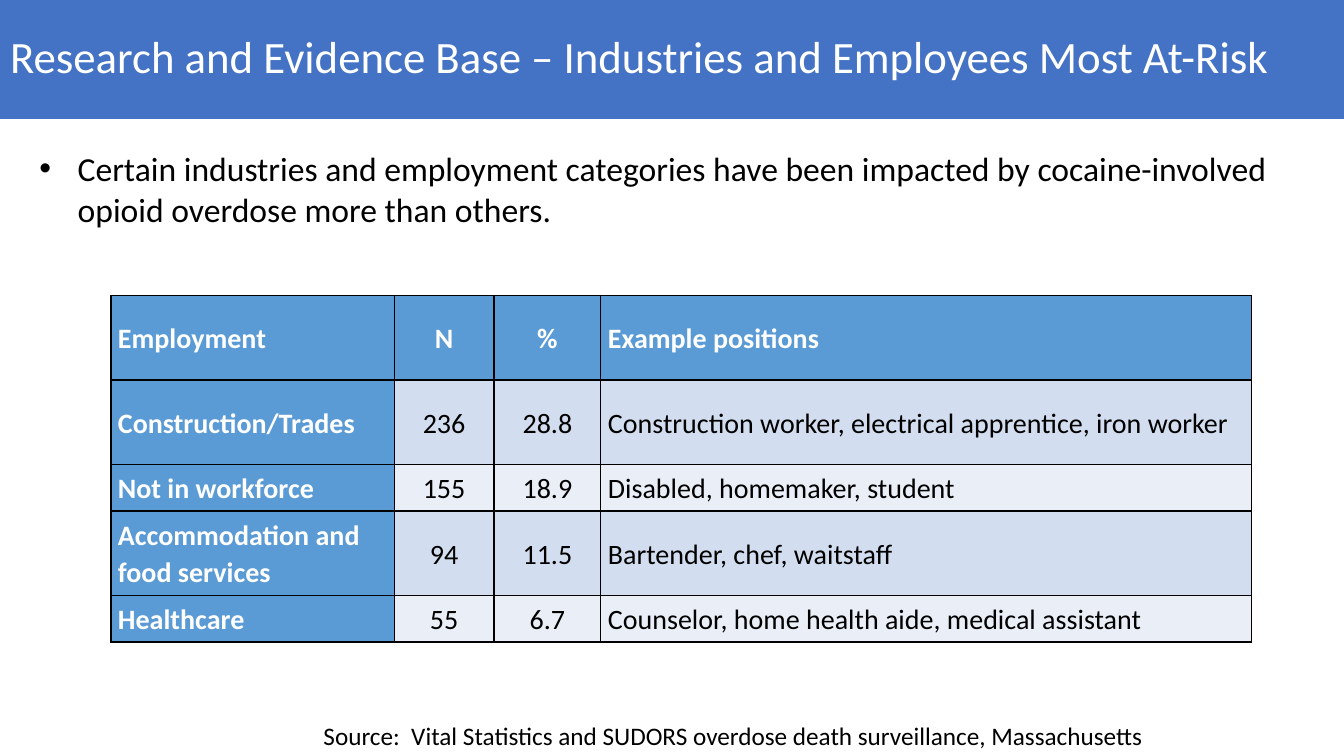
from lxml import etree
from pptx import Presentation
from pptx.dml.color import RGBColor
from pptx.enum.text import MSO_ANCHOR, MSO_AUTO_SIZE, PP_ALIGN
from pptx.oxml.ns import qn
from pptx.util import Inches, Pt

LEFT, CENTER = PP_ALIGN.LEFT, PP_ALIGN.CENTER
MIDDLE, TOP = MSO_ANCHOR.MIDDLE, MSO_ANCHOR.TOP
NO_AUTOFIT = MSO_AUTO_SIZE.NONE

WHITE = RGBColor(0xFF, 0xFF, 0xFF)
BLACK = RGBColor(0x00, 0x00, 0x00)
TITLE_BLUE = RGBColor(0x44, 0x72, 0xC4)
HEADER_BLUE = RGBColor(0x5B, 0x9B, 0xD5)
BAND_DARK = RGBColor(0xD2, 0xDE, 0xEF)
BAND_LIGHT = RGBColor(0xEA, 0xEF, 0xF7)

FONT = "Calibri"
COLUMN_WIDTHS = (2.81, 0.99, 1.06, 6.45)
ROW_HEIGHTS = (0.84, 0.84, 0.46, 0.84, 0.46)
ROWS = (
    ("Employment", "N", "%", "Example positions"),
    ("Construction/Trades", "236", "28.8",
     "Construction worker, electrical apprentice, iron worker"),
    ("Not in workforce", "155", "18.9", "Disabled, homemaker, student"),
    ("Accommodation and food services", "94", "11.5", "Bartender, chef, waitstaff"),
    ("Healthcare", "55", "6.7", "Counselor, home health aide, medical assistant"),
)


def write_text(tf, text, size=20, color=BLACK, bold=False, align=LEFT,
               spacing=1.0, anchor=TOP):
    tf.word_wrap = True
    tf.vertical_anchor = anchor
    p = tf.paragraphs[0]
    p.alignment = align
    p.line_spacing = spacing
    p.space_before = Pt(0)
    r = p.add_run()
    r.text = text
    r.font.name = FONT
    r.font.size = Pt(size)
    r.font.bold = bold
    r.font.color.rgb = color
    return p


def place(sp, left, top, width, height):
    sp.left, sp.top = Inches(left), Inches(top)
    sp.width, sp.height = Inches(width), Inches(height)
    sp.text_frame.auto_size = NO_AUTOFIT


def add_title(s, text):
    sp = s.shapes.title
    place(sp, 0, 0, 13.33, 1.18)
    sp.fill.solid()
    sp.fill.fore_color.rgb = TITLE_BLUE
    write_text(sp.text_frame, text, size=32, color=WHITE, spacing=0.9, anchor=MIDDLE)


def add_bullet(s, text):
    sp = s.placeholders[1]
    place(sp, 0.29, 1.42, 12.94, 0.91)
    p = write_text(sp.text_frame, text, size=24)
    pPr = p._p.get_or_add_pPr()
    pPr.set("marL", str(Inches(0.38)))
    pPr.set("indent", str(-Inches(0.38)))
    etree.SubElement(pPr, qn("a:buFont"), typeface="Arial")
    etree.SubElement(pPr, qn("a:buChar"), char="•")


def set_borders(cell, color, width):
    tcPr = cell._tc.get_or_add_tcPr()
    for i, side in enumerate(("lnL", "lnR", "lnT", "lnB")):
        ln = etree.Element(qn(f"a:{side}"), w=str(Pt(width)))
        fill = etree.SubElement(ln, qn("a:solidFill"))
        etree.SubElement(fill, qn("a:srgbClr"), val=str(color))
        tcPr.insert(i, ln)


def format_cell(cell, text, row, column):
    header = row == 0 or column == 0
    cell.margin_left = cell.margin_right = Inches(0.07)
    cell.margin_top = cell.margin_bottom = 0
    cell.vertical_anchor = MIDDLE
    cell.fill.solid()
    band = BAND_DARK if row % 2 else BAND_LIGHT
    cell.fill.fore_color.rgb = HEADER_BLUE if header else band
    set_borders(cell, BLACK, 1)
    write_text(cell.text_frame, text, color=WHITE if header else BLACK, bold=header,
               align=CENTER if column in (1, 2) else LEFT, spacing=1.07, anchor=MIDDLE)


def add_employment_table(s):
    frame = s.shapes.add_table(len(ROWS), len(COLUMN_WIDTHS), Inches(1.1), Inches(2.93),
                               Inches(sum(COLUMN_WIDTHS)), Inches(sum(ROW_HEIGHTS)))
    table = frame.table
    for column, width in zip(table.columns, COLUMN_WIDTHS):
        column.width = Inches(width)
    for i, (height, texts) in enumerate(zip(ROW_HEIGHTS, ROWS)):
        table.rows[i].height = Inches(height)
        for j, text in enumerate(texts):
            format_cell(table.cell(i, j), text, i, j)


def add_source(s, text):
    sp = s.shapes.add_textbox(Inches(3.11), Inches(7.1), Inches(8.42), Inches(0.4))
    write_text(sp.text_frame, text, size=18)


def main():
    prs = Presentation()
    prs.slide_width, prs.slide_height = Inches(13.33), Inches(7.5)
    s = prs.slides.add_slide(prs.slide_layouts[1])
    add_title(s, "Research and Evidence Base – Industries and Employees Most At-Risk")
    add_bullet(s, "Certain industries and employment categories have been impacted by "
                  "cocaine-involved opioid overdose more than others.")
    add_employment_table(s)
    add_source(s, "Source:  Vital Statistics and SUDORS overdose death surveillance, "
                  "Massachusetts")
    prs.save("out.pptx")


if __name__ == "__main__":
    main()
